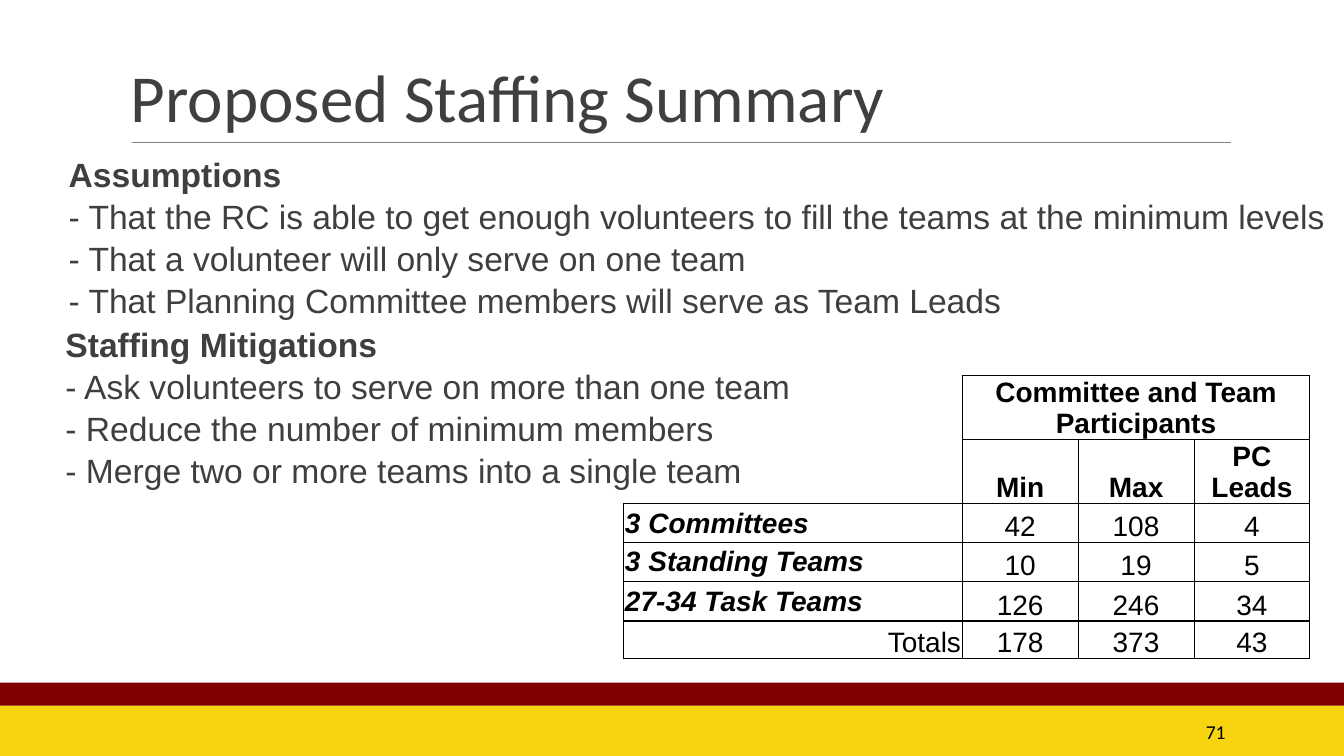
from pptx import Presentation
from pptx import util as u
from pptx.dml.color import RGBColor
from pptx.enum import shapes, text
from pptx.oxml.ns import qn
from lxml import etree

COLORS = {"gold": "F8D410", "maroon": "800000", "rule": "7F7F7F",
          "text": "3F3F3F", "black": "000000"}
LEFT, CENTER, RIGHT = text.PP_ALIGN.LEFT, text.PP_ALIGN.CENTER, text.PP_ALIGN.RIGHT
TOP, MIDDLE, BOTTOM = text.MSO_ANCHOR.TOP, text.MSO_ANCHOR.MIDDLE, text.MSO_ANCHOR.BOTTOM

ASSUMPTIONS = [
    "Assumptions",
    "- That the RC is able to get enough volunteers to fill the teams at the minimum levels",
    "- That a volunteer will only serve on one team",
    "- That Planning Committee members will serve as Team Leads",
]
MITIGATIONS = [
    "Staffing Mitigations",
    "- Ask volunteers to serve on more than one team",
    "- Reduce the number of minimum members",
    "- Merge two or more teams into a single team",
]
STAFFING = [
    ["", "Committee and Team Participants", "", ""],
    ["", "Min", "Max", "PC Leads"],
    ["3 Committees", "42", "108", "4"],
    ["3 Standing Teams", "10", "19", "5"],
    ["27-34 Task Teams", "126", "246", "34"],
    ["Totals", "178", "373", "43"],
]
COL_WIDTHS = [8.53, 2.92, 2.92, 2.92]
ROW_HEIGHTS = [1.59, 1.59, 0.98, 0.98, 1.01, 0.94]
ROW_LINES = [1, 0.5, 1, 0.5, 0.5, 1, 1]


def rgb(name):
    return RGBColor.from_string(COLORS[name])


def write(p, words, size=24, font="Arial", color="text", bold=False,
          italic=False, align=LEFT, spacing=1.0, before=0):
    p.alignment = align
    p.line_spacing = spacing
    p.space_before = u.Pt(before)
    p.space_after = u.Pt(0)
    r = p.add_run()
    r.text = words
    r.font.size = u.Pt(size)
    r.font.name = font
    r.font.bold = bold
    r.font.italic = italic
    r.font.color.rgb = rgb(color)


def place(sp, left, top, width, height):
    sp.left, sp.top, sp.width, sp.height = (
        u.Cm(v) for v in (left, top, width, height))


def frame(sp, anchor=TOP, side=0.25):
    tf = sp.text_frame
    tf.word_wrap = True
    tf.auto_size = text.MSO_AUTO_SIZE.NONE
    tf.vertical_anchor = anchor
    tf.margin_left = tf.margin_right = u.Cm(side)
    tf.margin_top = tf.margin_bottom = u.Cm(0.13)
    return tf


def add_band(s, top, height, color):
    sp = s.shapes.add_shape(shapes.MSO_SHAPE.RECTANGLE, 0, u.Cm(top),
                            u.Cm(33.87), u.Cm(height))
    sp.shadow.inherit = False
    sp.fill.solid()
    sp.fill.fore_color.rgb = rgb(color)
    sp.line.fill.background()


def add_rule(s, left, right, top):
    line = s.shapes.add_connector(shapes.MSO_CONNECTOR.STRAIGHT, u.Cm(left),
                                  u.Cm(top), u.Cm(right), u.Cm(top))
    line.line.color.rgb = rgb("rule")
    line.line.width = u.Pt(0.75)
    etree.SubElement(line._element.spPr, qn("a:effectLst"))


def blank_bullet(p):
    pPr = p._p.get_or_add_pPr()
    pPr.set("marL", str(u.Cm(1.27)))
    pPr.set("indent", str(-u.Cm(0.95)))
    clr = etree.SubElement(pPr, qn("a:buClr"))
    etree.SubElement(clr, qn("a:srgbClr"), val=COLORS["maroon"])
    etree.SubElement(pPr, qn("a:buChar"), char=" ")


def fill_list(sp, lines):
    tf = frame(sp, side=0)
    for i, words in enumerate(lines):
        p = tf.add_paragraph() if i else tf.paragraphs[0]
        write(p, words, bold=i == 0, before=1.2)
        blank_bullet(p)


def cell_border(cell, side, width):
    tcPr = cell._tc.get_or_add_tcPr()
    ln = etree.SubElement(tcPr, qn("a:" + side), w=str(u.Pt(width)))
    if width:
        fill = etree.SubElement(ln, qn("a:solidFill"))
        etree.SubElement(fill, qn("a:srgbClr"), val=COLORS["black"])
    else:
        etree.SubElement(ln, qn("a:noFill"))


def column_line(row, col):
    if col == 1:
        return 0.5 if 2 <= row < 5 else 1
    return 1 if col in (0, 4) else 0.5


def format_cell(cell, row, col):
    words = STAFFING[row][col]
    label = col == 0 and row in (2, 3, 4)
    cell.vertical_anchor = MIDDLE if label else BOTTOM
    cell.margin_left = cell.margin_right = cell.margin_top = u.Cm(0.03)
    cell.margin_bottom = 0
    if words:
        align = CENTER if col else LEFT if label else RIGHT
        write(cell.text_frame.paragraphs[0], words, size=20, color="black",
              bold=label or row < 2, italic=label, align=align)
    corner = not words
    bottom = row + cell.span_height if cell.is_merge_origin else row + 1
    right = col + cell.span_width if cell.is_merge_origin else col + 1
    cell_border(cell, "lnL", 0 if corner else column_line(row, col))
    cell_border(cell, "lnR", column_line(row, right))
    cell_border(cell, "lnT", 0 if corner else ROW_LINES[row])
    cell_border(cell, "lnB", ROW_LINES[bottom])
    cell.fill.background()


def add_staffing_table(s):
    table = s.shapes.add_table(
        len(STAFFING), len(COL_WIDTHS), u.Cm(15.72), u.Cm(9.47),
        u.Cm(sum(COL_WIDTHS)), u.Cm(sum(ROW_HEIGHTS))).table
    table.first_row = table.horz_banding = False
    for column, width in zip(table.columns, COL_WIDTHS):
        column.width = u.Cm(width)
    for row, height in zip(table.rows, ROW_HEIGHTS):
        row.height = u.Cm(height)
    table.cell(0, 0).merge(table.cell(1, 0))
    table.cell(0, 1).merge(table.cell(0, 3))
    for row in range(len(STAFFING)):
        for col in range(len(COL_WIDTHS)):
            cell = table.cell(row, col)
            if not cell.is_spanned:
                format_cell(cell, row, col)


def main():
    prs = Presentation()
    prs.slide_width, prs.slide_height = u.Cm(33.87), u.Cm(19.05)
    s = prs.slides.add_slide(prs.slide_layouts[3])
    title, assumptions, mitigations = list(s.placeholders)

    add_band(s, 17.78, 1.27, "gold")
    add_band(s, 17.2, 0.58, "maroon")
    add_rule(s, 3.33, 31.01, 3.58)

    place(title, 3.05, 0.79, 27.94, 2.77)
    write(frame(title, BOTTOM).paragraphs[0], "Proposed Staffing Summary",
          size=48, font="Calibri", spacing=0.85)

    place(assumptions, 0.46, 3.76, 33.1, 4.6)
    fill_list(assumptions, ASSUMPTIONS)
    place(mitigations, 0.38, 8.03, 23.01, 4.6)
    fill_list(mitigations, MITIGATIONS)

    add_staffing_table(s)

    number = s.shapes.add_textbox(u.Cm(27.51), u.Cm(17.93), u.Cm(3.63), u.Cm(1.02))
    write(frame(number, MIDDLE).paragraphs[0], "71", size=14, font="Calibri",
          color="black", align=RIGHT)
    prs.save("out.pptx")


if __name__ == "__main__":
    main()
